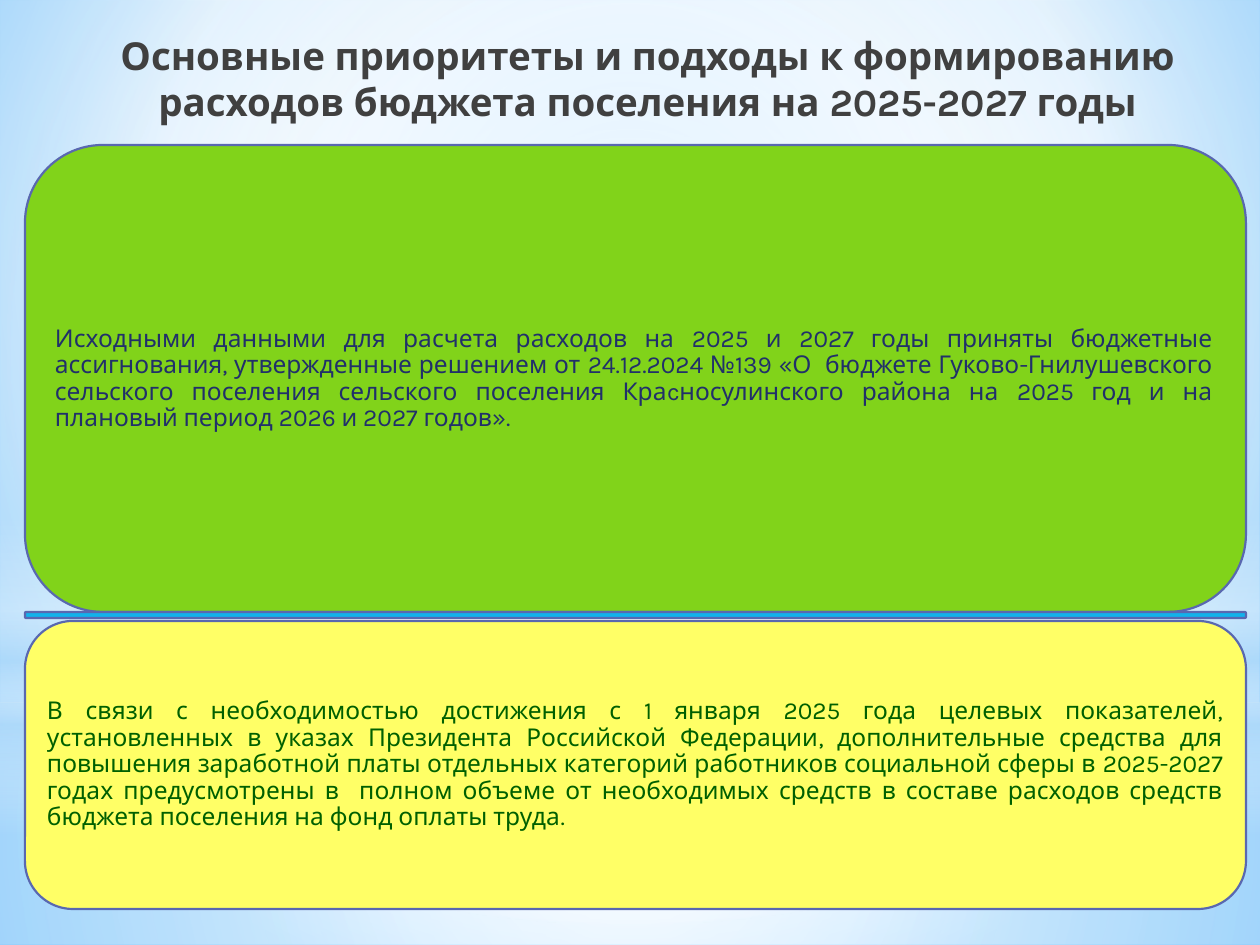
from dataclasses import dataclass

from lxml.etree import SubElement
from pptx import Presentation
from pptx.dml.color import RGBColor
from pptx.enum.shapes import MSO_SHAPE as Shape
from pptx.enum.text import MSO_ANCHOR as Anchor, MSO_AUTO_SIZE as AutoSize, PP_ALIGN as Align
from pptx.oxml.ns import qn
from pptx.util import Inches, Pt

PX = Inches(1) / 126


def px(length):
    return round(length * PX)


@dataclass(frozen=True)
class Theme:
    font: str = "Karla"
    title_size: int = 22
    body_size: int = 14
    line_width: float = 1.25
    title: str = "404040"
    outline: str = "5968B0"
    green: str = "81D31A"
    navy: str = "21306A"
    blue: str = "12B2EB"
    yellow: str = "FFFF66"
    dark_green: str = "006000"
    white: str = "FFFFFF"
    haze: str = "B4DCFA"
    sky: str = "9ED5FF"
    deep_sky: str = "5BB9FF"


CENTRE = (50, 50, 50, 50)


class SlideBuilder:
    def __init__(self, slide, theme):
        self.slide = slide
        self.theme = theme

    def gradient(self, fill, owner, stops, focus):
        fill.gradient()
        gradient = owner.find(".//" + qn("a:gradFill"))
        for child in list(gradient):
            gradient.remove(child)
        stop_list = SubElement(gradient, qn("a:gsLst"))
        for position, color, opacity in stops:
            stop = SubElement(stop_list, qn("a:gs"), pos=str(position * 1000))
            value = SubElement(stop, qn("a:srgbClr"), val=color)
            if opacity < 100:
                SubElement(value, qn("a:alpha"), val=str(opacity * 1000))
        if focus:
            circle = SubElement(gradient, qn("a:path"), {"path": "circle"})
            edges = {side: str(share * 1000) for side, share in zip("ltrb", focus)}
            SubElement(circle, qn("a:fillToRect"), edges)
        else:
            SubElement(gradient, qn("a:lin"), ang="5400000", scaled="0")

    def background(self, stops, focus):
        self.gradient(self.slide.background.fill, self.slide.element, stops, focus)

    def glow(self, kind, box, stops, focus=CENTRE):
        shape = self.shape(kind, box)
        shape.line.fill.background()
        self.gradient(shape.fill, shape.element, stops, focus)

    def shape(self, kind, box):
        shape = self.slide.shapes.add_shape(kind, *map(px, box))
        shape.shadow.inherit = False
        return shape

    def panel(self, box, color):
        shape = self.shape(Shape.ROUNDED_RECTANGLE, box)
        shape.fill.solid()
        shape.fill.fore_color.rgb = RGBColor.from_string(color)
        shape.line.color.rgb = RGBColor.from_string(self.theme.outline)
        shape.line.width = Pt(self.theme.line_width)

    def fill_text(self, frame, text, size, color, align, bold=False):
        frame.word_wrap = True
        frame.auto_size = AutoSize.NONE
        paragraph = frame.paragraphs[0]
        paragraph.text = text
        paragraph.alignment = align
        paragraph.font.name = self.theme.font
        paragraph.font.size = Pt(size)
        paragraph.font.bold = bold
        paragraph.font.color.rgb = RGBColor.from_string(color)
        return paragraph

    def title(self, box, text):
        title = self.slide.shapes.title
        title.left, title.top, title.width, title.height = map(px, box)
        frame = title.text_frame
        frame.vertical_anchor = Anchor.TOP
        frame.margin_left = px(18)
        self.fill_text(frame, text, self.theme.title_size, self.theme.title, Align.CENTER, True)
        self.slide.shapes.element.append(title.element)

    def body(self, box, text, color):
        frame = self.slide.shapes.add_textbox(*map(px, box)).text_frame
        frame.vertical_anchor = Anchor.MIDDLE
        frame.margin_left = frame.margin_right = px(8)
        frame.margin_top = frame.margin_bottom = px(8)
        paragraph = self.fill_text(frame, text, self.theme.body_size, color, Align.JUSTIFY)
        paragraph.line_spacing = 0.9


def main():
    presentation = Presentation()
    presentation.slide_width, presentation.slide_height = px(1260), px(945)
    theme = Theme()
    slide = presentation.slides.add_slide(presentation.slide_layouts[5])
    builder = SlideBuilder(slide, theme)
    white, haze = theme.white, theme.haze

    builder.background(
        [(0, theme.sky, 100), (60, white, 100), (100, theme.deep_sky, 100)],
        (20, 10, 20, 60),
    )
    builder.glow(Shape.RECTANGLE, (0, 703, 1260, 242),
                 [(0, white, 91), (37, white, 76), (100, haze, 79)])
    builder.glow(Shape.RECTANGLE, (0, 0, 1260, 703),
                 [(0, white, 89), (48, white, 62), (100, haze, 79)])
    builder.glow(Shape.RECTANGLE, (0, 519, 1260, 315),
                 [(0, white, 0), (29, white, 30), (45, haze, 40),
                  (55, white, 26), (65, haze, 60), (100, white, 0)], None)
    builder.glow(Shape.OVAL, (0, 220, 1260, 703), [(0, white, 100), (56, white, 0)])

    builder.title((94, 26, 1102, 110),
                  "Основные приоритеты и подходы к формированию расходов "
                  "бюджета поселения на 2025-2027 годы")

    left, width = 25, 1221
    builder.panel((left, 145, width, 467), theme.green)
    builder.body((47, 168, 1174, 422),
                 "Исходными данными для расчета расходов на 2025 и 2027 годы приняты "
                 "бюджетные ассигнования, утвержденные решением от 24.12.2024 №139 "
                 "«О  бюджете Гуково-Гнилушевского сельского поселения сельского "
                 "поселения Краcносулинского района на 2025 год и на плановый период "
                 "2026 и 2027 годов».", theme.navy)
    builder.panel((left, 612, width, 6), theme.blue)
    builder.panel((left, 621, width, 288), theme.yellow)
    builder.body((39, 635, 1192, 260),
                 "В связи с необходимостью достижения с 1 января 2025 года целевых "
                 "показателей, установленных в указах Президента Российской Федерации, "
                 "дополнительные средства для повышения заработной платы отдельных "
                 "категорий работников социальной сферы в 2025-2027 годах предусмотрены "
                 "в  полном объеме от необходимых средств в составе расходов средств "
                 "бюджета поселения на фонд оплаты труда.", theme.dark_green)

    presentation.save("out.pptx")


if __name__ == "__main__":
    main()
